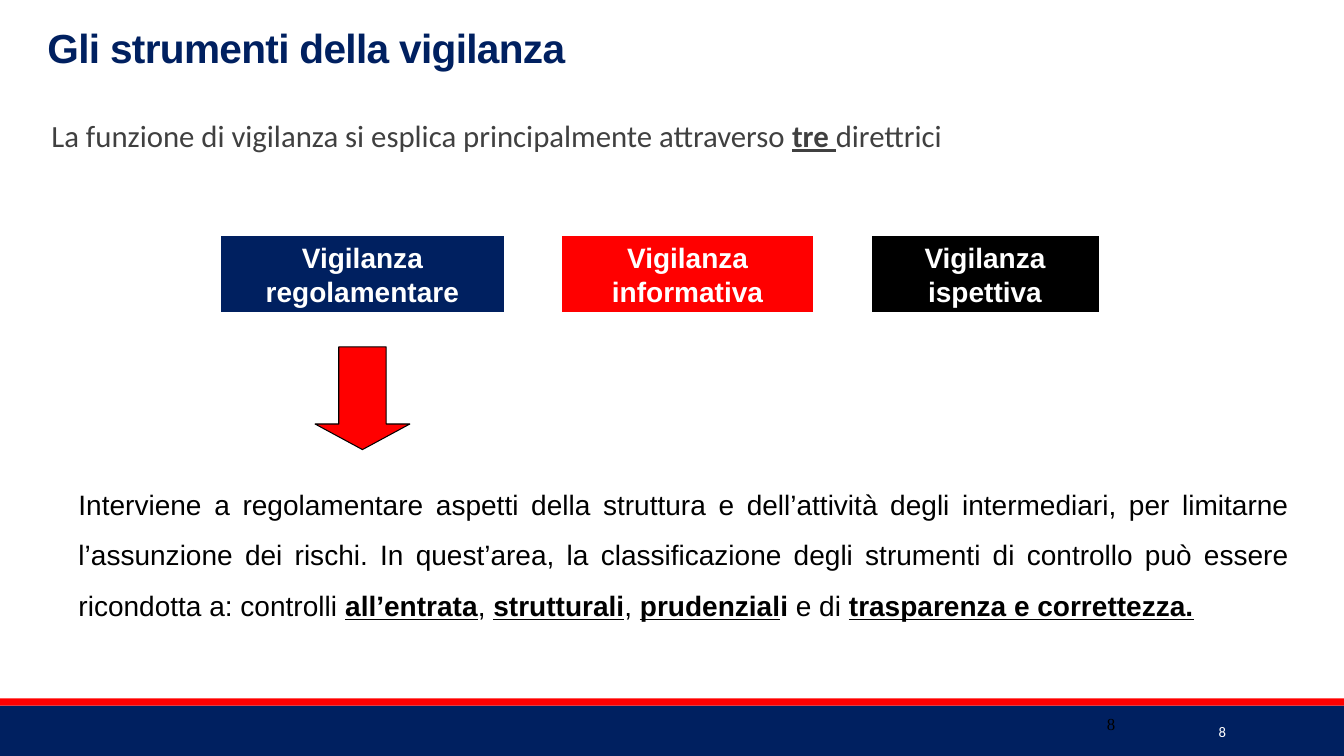
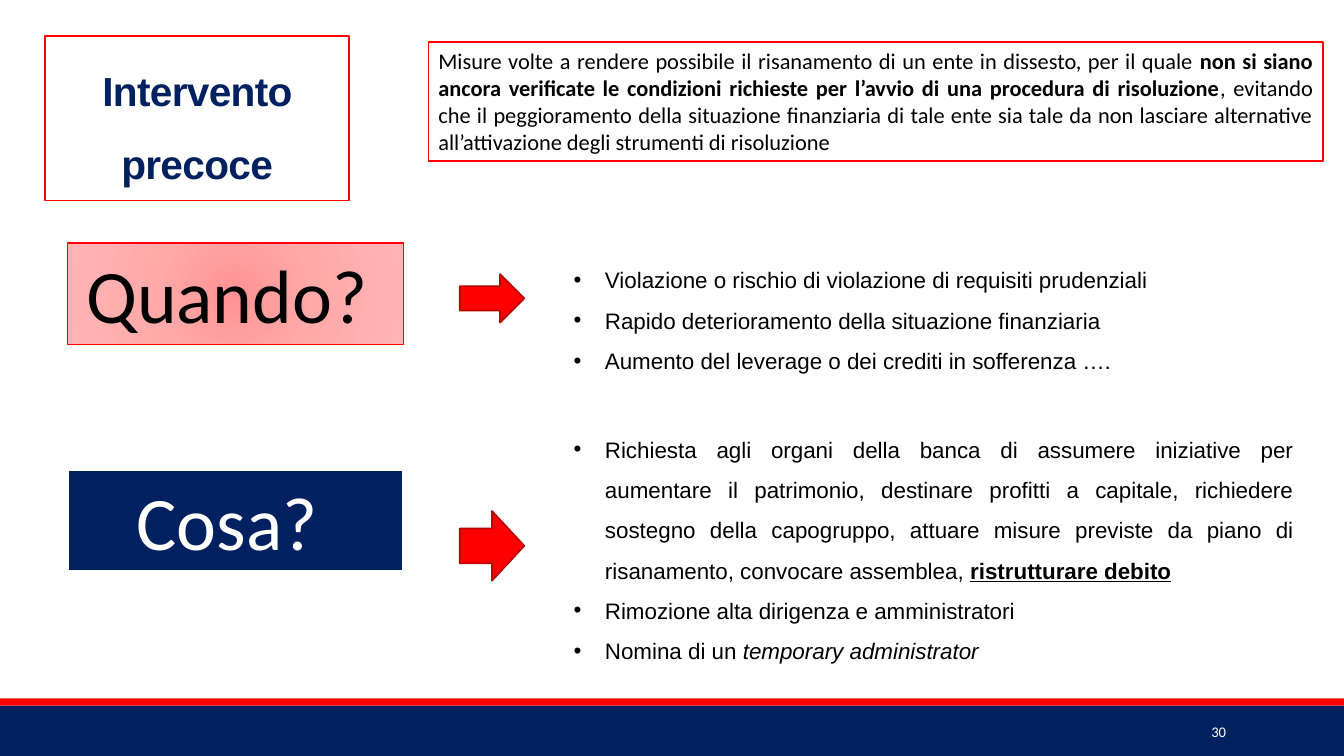
"""Build two slides on banking supervision tools and early intervention."""
from pptx import Presentation
from pptx.dml.color import RGBColor
from pptx.enum.shapes import MSO_SHAPE as Preset
from pptx.enum.text import MSO_ANCHOR as Anchor, MSO_AUTO_SIZE as AutoSize, PP_ALIGN as Align
from pptx.oxml import parse_xml
from pptx.oxml.ns import nsdecls, qn
from pptx.util import Inches, Pt

NAVY, RED, DARK_RED, BLACK, WHITE, GREY = "002060", "FF0000", "BD0000", "000000", "FFFFFF", "404040"
PINK_STOPS = [(0, "FF9393"), (45, "FFA9A9"), (100, "FFB4B4")]

BANDS = [(7, 0.5, NAVY), (6.93, 0.07, RED)]

TOOLS_TITLE = "Gli strumenti della vigilanza"
TOOLS_INTRO = [[("La funzione di vigilanza si esplica principalmente attraverso ", ""),
                ("tre ", "bu"), ("direttrici", "")]]
TOOLS = [("Vigilanza regolamentare", 2.83, NAVY),
         ("Vigilanza informativa", 2.52, RED),
         ("Vigilanza ispettiva", 2.28, BLACK)]
TOOLS_TEXT = [[
    ("Interviene a regolamentare aspetti della struttura e dell’attività degli intermediari, "
     "per limitarne l’assunzione dei rischi. In quest’area, la classificazione degli strumenti "
     "di controllo può essere ricondotta a: controlli ", ""),
    ("all’entrata", "bu"), (", ", ""), ("strutturali", "bu"), (", ", ""),
    ("prudenzial", "bu"), ("i", "b"), (" e di ", ""), ("trasparenza e correttezza.", "bu")]]

EARLY_TITLE = "Intervento precoce"
EARLY_TEXT = [[
    ("Misure volte a rendere possibile il risanamento di un ente in dissesto, per il quale ", ""),
    ("non si siano ancora verificate le condizioni richieste per l’avvio di una procedura "
     "di risoluzione", "b"),
    (", evitando che il peggioramento della situazione finanziaria di tale ente sia tale da non "
     "lasciare alternative all’attivazione degli strumenti di risoluzione", "")]]
QUESTIONS = [
    {"word": "Quando? ", "top": 2.41, "fill": PINK_STOPS, "line": (RED, 1), "color": BLACK,
     "arrow": (2.72, 0.48), "list": (2.46, 1.31), "align": Align.LEFT,
     "points": [[("Violazione o rischio di violazione di requisiti prudenziali", "")],
                [("Rapido deterioramento della situazione finanziaria", "")],
                [("Aumento del leverage o dei crediti in sofferenza ….", "")]]},
    {"word": "Cosa? ", "top": 4.66, "fill": NAVY, "line": (WHITE, 2), "color": WHITE,
     "arrow": (5.07, 0.69), "list": (4.14, 2.52), "align": Align.JUSTIFY,
     "points": [[("Richiesta agli organi della banca di assumere iniziative per aumentare il "
                  "patrimonio, destinare profitti a capitale, richiedere sostegno della "
                  "capogruppo, attuare misure previste da piano di risanamento, convocare "
                  "assemblea, ", ""), ("ristrutturare debito", "bu")],
                [("Rimozione alta dirigenza e amministratori", "")],
                [("Nomina di un ", ""), ("temporary administrator", "i")]]},
]


def rgb(value):
    return RGBColor.from_string(value)


def place(shape, left, top, width, height):
    shape.left, shape.top = Inches(left), Inches(top)
    shape.width, shape.height = Inches(width), Inches(height)


def paint(shape, fill, line=None):
    if isinstance(fill, list):
        stops = "".join(f'<a:gs pos="{position * 1000}"><a:srgbClr val="{color}"/></a:gs>'
                        for position, color in fill)
        gradient = parse_xml(
            f'<a:gradFill {nsdecls("a")} rotWithShape="1"><a:gsLst>{stops}</a:gsLst>'
            '<a:path path="circle"><a:fillToRect l="50000" t="50000" r="50000" b="50000"/>'
            '</a:path></a:gradFill>')
        shape.element.spPr.find(qn("a:prstGeom")).addnext(gradient)
    else:
        shape.fill.solid()
        shape.fill.fore_color.rgb = rgb(fill)
    if line:
        shape.line.color.rgb = rgb(line[0])
        shape.line.width = Pt(line[1])
    else:
        shape.line.fill.background()


def add_block(slide, preset, area, fill, line=None):
    shape = slide.shapes.add_shape(preset, *map(Inches, area))
    shape.shadow.inherit = False
    paint(shape, fill, line)
    return shape


def add_text(slide, area, *args, **options):
    write(slide.shapes.add_textbox(*map(Inches, area)), *args, **options)


def write(shape, paragraphs, size, color, font="Arial", align=Align.LEFT, spacing=1.0,
          bold=False, anchor=Anchor.TOP, indent=None):
    frame = shape.text_frame
    frame.word_wrap, frame.auto_size, frame.vertical_anchor = True, AutoSize.NONE, anchor
    if isinstance(paragraphs, str):
        paragraphs = [[(paragraphs, "")]]
    for index, spans in enumerate(paragraphs):
        para = frame.add_paragraph() if index else frame.paragraphs[0]
        if indent is not None:
            properties = para._p.get_or_add_pPr()
            properties.set("marL", str(Inches(indent)))
            properties.set("indent", str(-Inches(indent)))
            bullet = '<a:buChar {} char="•"/>' if indent else "<a:buNone {}/>"
            properties.append(parse_xml(bullet.format(nsdecls("a"))))
        para.alignment, para.line_spacing, para.space_before = align, spacing, Pt(0)
        for text, style in spans:
            span = para.add_run()
            span.text = text
            span.font.name, span.font.size, span.font.color.rgb = font, Pt(size), rgb(color)
            span.font.bold = bold or "b" in style
            span.font.underline, span.font.italic = "u" in style, "i" in style


def start_slide(deck, layout, title, title_area, number, **options):
    slide = deck.slides.add_slide(deck.slide_layouts[layout])
    heading = slide.shapes.title
    place(heading, *title_area)
    write(heading, title, 29, NAVY, bold=True, **options)
    for span in heading.text_frame.paragraphs[0].runs:
        span._r.get_or_add_rPr().set("spc", "-50")
    add_text(slide, (10.83, 7.06, 1.43, 0.4), number, 10.5, WHITE, "Calibri", Align.RIGHT,
             anchor=Anchor.MIDDLE)
    return slide


def add_master_bands(deck, slide):
    for index, (top, height, color) in enumerate(BANDS):
        band = add_block(slide, Preset.RECTANGLE, (0, top, 13.33, height), color)
        deck.slide_master.shapes.element.insert(2 + index, band.element)


def build_tools(deck):
    slide = start_slide(deck, 1, TOOLS_TITLE, (0.37, 0.25, 10.17, 0.85), "8", spacing=0.85)
    add_master_bands(deck, slide)
    intro = slide.placeholders[1]
    place(intro, 0.51, 1.15, 10.1, 0.47)
    intro.text_frame.margin_left = intro.text_frame.margin_right = 0
    write(intro, TOOLS_INTRO, 22, GREY, "Calibri", spacing=0.9, indent=0)
    add_text(slide, (8.83, 6.83, 2.33, 0.5), "8", 12, BLACK, "Times New Roman", Align.RIGHT,
             anchor=Anchor.BOTTOM)
    first_left, gap = 2.18, 0.55
    left = first_left
    for name, width, color in TOOLS:
        box = add_block(slide, Preset.RECTANGLE, (left, 2.33, width, 0.78), color, (WHITE, 2))
        write(box, name, 20, WHITE, align=Align.CENTER, bold=True, anchor=Anchor.MIDDLE)
        left += width + gap
    arrow_width = 0.94
    arrow_left = first_left + (TOOLS[0][1] - arrow_width) / 2
    arrow = add_block(slide, Preset.DOWN_ARROW, (arrow_left, 3.44, arrow_width, 1.02), RED,
                      (BLACK, 0.75))
    arrow.adjustments[1] = 0.27
    add_text(slide, (0.68, 4.62, 12.21, 1.62), TOOLS_TEXT, 20, BLACK, align=Align.JUSTIFY,
             spacing=1.5)


def build_early(deck):
    slide = start_slide(deck, 3, EARLY_TITLE, (0.45, 0.36, 3.01, 1.63), "30",
                        align=Align.CENTER, spacing=1.5)
    paint(slide.shapes.title, WHITE, (RED, 1.25))
    definition = add_block(slide, Preset.RECTANGLE, (4.25, 0.42, 8.87, 1.18), WHITE, (RED, 1.25))
    write(definition, EARLY_TEXT, 16, BLACK, "Calibri", Align.JUSTIFY)
    for index, question in enumerate(QUESTIONS, 1):
        box = add_block(slide, Preset.RECTANGLE, (0.67, question["top"], 3.33, 1.01),
                        question["fill"], question["line"])
        write(box, question["word"], 54, question["color"], "Calibri", Align.CENTER)
        top, height = question["arrow"]
        add_block(slide, Preset.RIGHT_ARROW, (4.56, top, 0.64, height), RED, (DARK_RED, 1.25))
        top, height = question["list"]
        points = slide.placeholders[index]
        place(points, 5.59, top, 7.34, height)
        write(points, question["points"], 16, BLACK, align=question["align"], spacing=1.5,
              indent=0.31)


def main():
    deck = Presentation()
    deck.slide_width, deck.slide_height = Inches(13.33), Inches(7.5)
    build_tools(deck)
    build_early(deck)
    deck.save("out.pptx")


if __name__ == "__main__":
    main()
